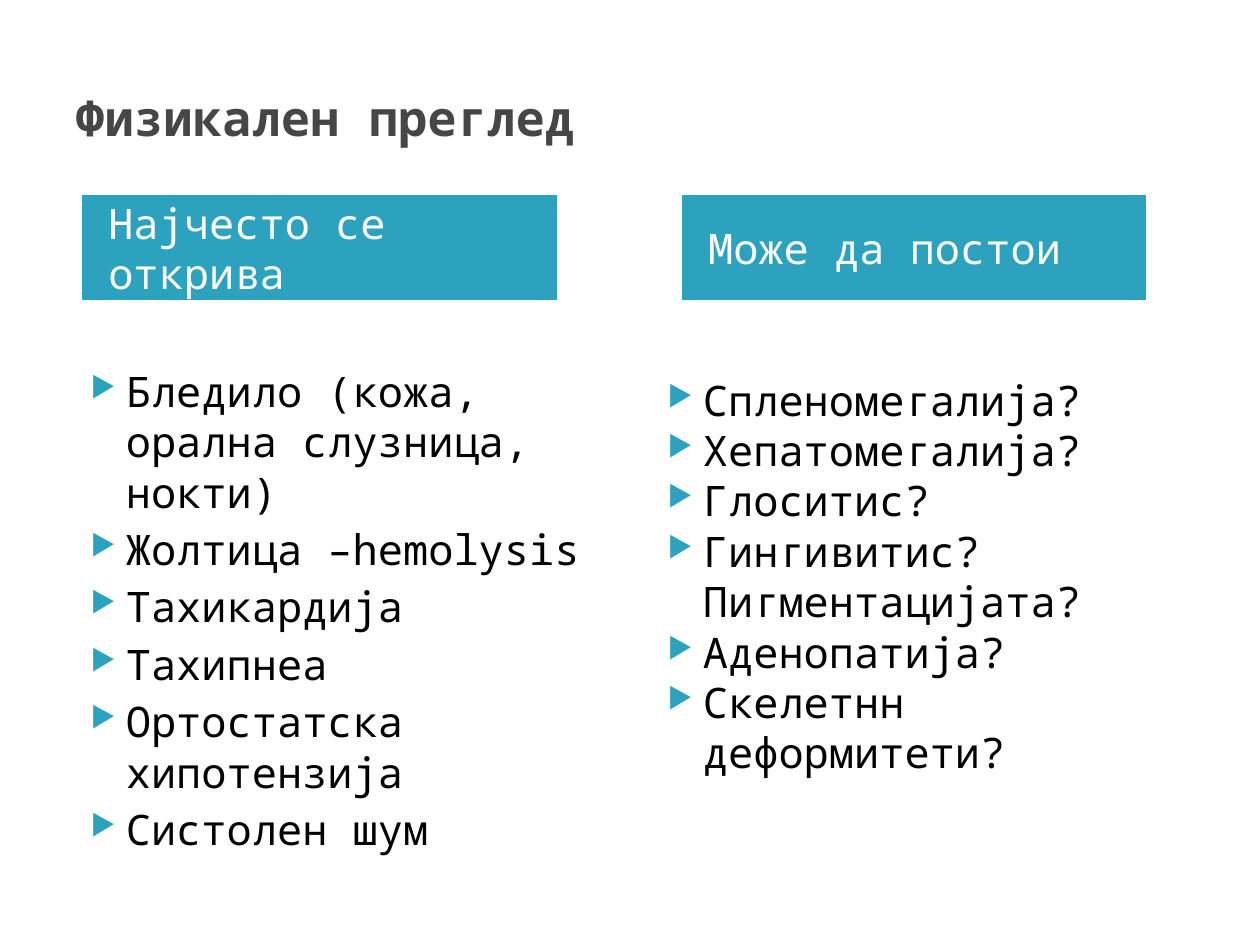
from dataclasses import dataclass

from lxml.etree import SubElement
from pptx import Presentation
from pptx.dml.color import RGBColor
from pptx.enum.shapes import MSO_SHAPE
from pptx.enum.text import MSO_ANCHOR, PP_ALIGN
from pptx.oxml.ns import qn
from pptx.util import Inches, Pt

TITLE = "Физикален преглед"
TITLE_PLACE = (0.5, 0.3, 9, 1.25)
COLUMNS = [
    {
        "heading": "Најчесто се открива",
        "heading_place": (0.66, 1.55, 3.76, 0.83),
        "findings": [
            "Бледило (кожа, орална слузница, нокти)",
            "Жолтица –hemolysis",
            "Тахикардија",
            "Тахипнеа",
            "Ортостатска хипотензија",
            "Систолен шум",
        ],
        "findings_place": (0.5, 2.85, 4.42, 3.84),
        "gap": 4,
    },
    {
        "heading": "Може да постои",
        "heading_place": (5.42, 1.55, 3.67, 0.83),
        "findings": [
            "Спленомегалија?",
            "Хепатомегалија?",
            "Глоситис?",
            "Гингивитис? Пигментацијата?",
            "Аденопатија?",
            "Скелетнн деформитети?",
        ],
        "findings_place": (5.08, 2.92, 4.42, 4.31),
        "gap": 0,
    },
]


@dataclass(frozen=True)
class Theme:
    font: str = "Noto Sans Mono"
    accent: str = "2DA2BF"
    title: str = "464646"
    body: str = "000000"
    heading: str = "FFFFFF"
    title_size: int = 28
    body_size: int = 24


THEME = Theme()


def style(para, size, color, bold=False):
    para.alignment = PP_ALIGN.LEFT
    para.font.name = THEME.font
    para.font.size = Pt(size)
    para.font.bold = bold
    para.font.color.rgb = RGBColor.from_string(color)


def add_bullet(para):
    properties = para._p.get_or_add_pPr()
    properties.set("marL", str(Inches(0.4)))
    properties.set("indent", str(Inches(-0.28)))
    color = SubElement(properties, qn("a:buClr"))
    SubElement(color, qn("a:srgbClr"), val=THEME.accent)
    SubElement(properties, qn("a:buSzPct"), val="68000")
    SubElement(properties, qn("a:buChar"), char="▶")


def add_text_box(page, place):
    frame = page.shapes.add_textbox(*map(Inches, place)).text_frame
    frame.word_wrap = True
    return frame


def add_title(page):
    frame = add_text_box(page, TITLE_PLACE)
    frame.vertical_anchor = MSO_ANCHOR.MIDDLE
    frame.text = TITLE
    style(frame.paragraphs[0], THEME.title_size, THEME.title, bold=True)


def add_heading(page, text, place):
    box = page.shapes.add_shape(MSO_SHAPE.RECTANGLE, *map(Inches, place))
    box.shadow.inherit = False
    box.fill.solid()
    box.fill.fore_color.rgb = RGBColor.from_string(THEME.accent)
    box.line.color.rgb = RGBColor.from_string(THEME.accent)
    box.line.width = Pt(0.75)
    frame = box.text_frame
    frame.word_wrap = True
    frame.vertical_anchor = MSO_ANCHOR.MIDDLE
    frame.margin_left = Inches(0.2)
    frame.text = text
    style(frame.paragraphs[0], THEME.body_size, THEME.heading)


def add_findings(page, findings, place, gap):
    frame = add_text_box(page, place)
    frame.text = "\n".join(findings)
    for index, para in enumerate(frame.paragraphs):
        add_bullet(para)
        style(para, THEME.body_size, THEME.body)
        para.space_before = Pt(gap if index else 0)


def main():
    """Build the physical examination slide with two columns of findings."""
    deck = Presentation()
    deck.slide_width, deck.slide_height = Inches(10), Inches(7.5)
    page = deck.slides.add_slide(deck.slide_layouts[6])
    add_title(page)
    for column in COLUMNS:
        add_heading(page, column["heading"], column["heading_place"])
        add_findings(page, column["findings"], column["findings_place"], column["gap"])
    deck.save("out.pptx")


if __name__ == "__main__":
    main()
